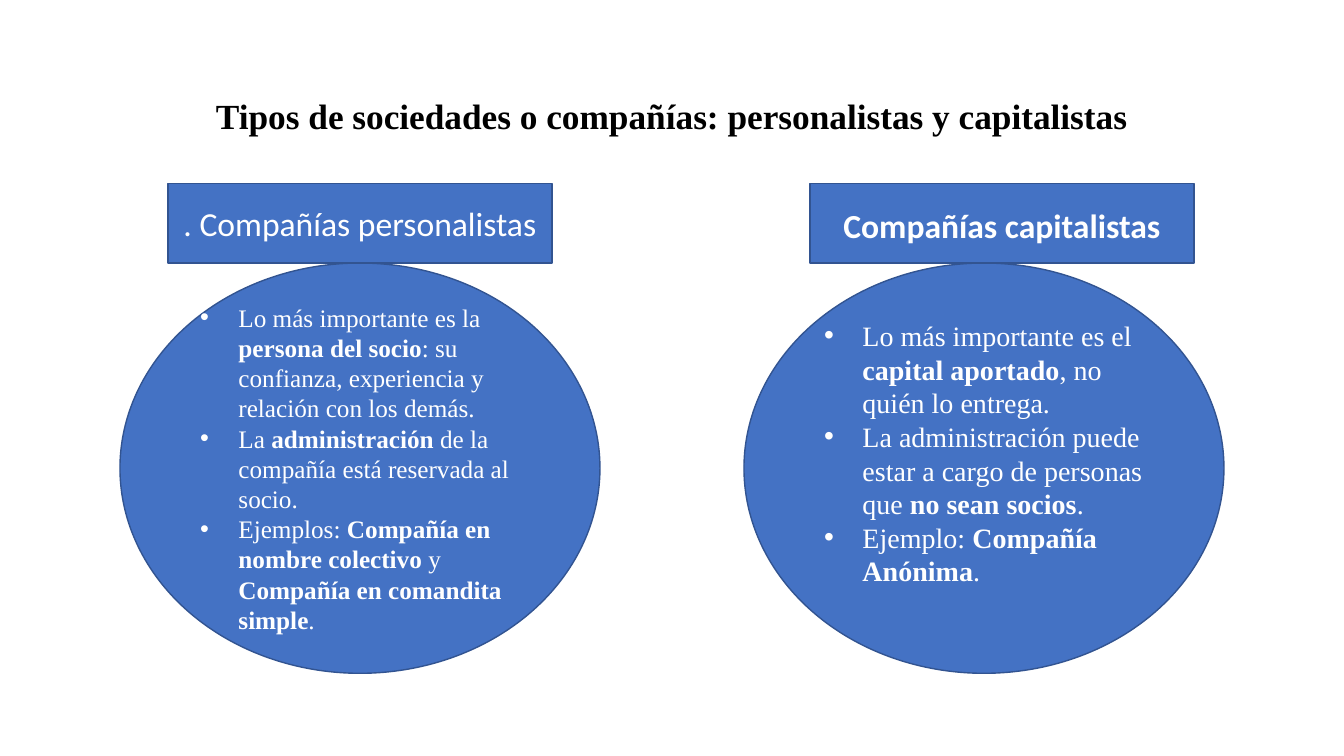
"""Build the slide that contrasts the two types of companies."""
from dataclasses import dataclass

from lxml import etree
from pptx import Presentation
from pptx.dml.color import RGBColor
from pptx.enum.shapes import MSO_SHAPE
from pptx.enum.text import MSO_ANCHOR, MSO_AUTO_SIZE, PP_ALIGN
from pptx.oxml.ns import qn
from pptx.util import Inches, Pt

ELLIPSE, RECTANGLE = MSO_SHAPE.OVAL, MSO_SHAPE.RECTANGLE
MIDDLE, BOTTOM = MSO_ANCHOR.MIDDLE, MSO_ANCHOR.BOTTOM
LEFT, CENTER = PP_ALIGN.LEFT, PP_ALIGN.CENTER
NO_AUTOFIT = MSO_AUTO_SIZE.NONE

COLORS = {"fill": "4472C4", "outline": "325491", "light": "FFFFFF", "dark": "000000"}
SERIF, SANS = "Times New Roman", "Calibri"
WIDTH, HEIGHT = Inches(13.33), Inches(7.5)
COLUMNS, ROWS = 56, 75
HEADING_TOP, HEADING_ROWS, HEADING_COLUMNS = 18.2, 7.9, 16
CIRCLE_TOP, CIRCLE_ROWS, CIRCLE_COLUMNS = 26.1, 40.7, 20
BULLET_INDENT = Inches(0.38)


@dataclass(frozen=True)
class Span:
    text: str
    bold: bool = False


@dataclass(frozen=True)
class Company:
    heading: Span
    heading_column: float
    circle_column: float
    size: float
    bottom_inset: float
    traits: tuple[tuple[Span, ...], ...]
    heading_spacing: tuple[float, float, float] = (1.0, 0, 0)


COMPANIES = (
    Company(
        Span(". Compañías personalistas"), 7, 5, 18, 0.05,
        (
            (Span("Lo más importante es la "), Span("persona del socio", True),
             Span(": su confianza, experiencia y relación con los demás.")),
            (Span("La "), Span("administración", True),
             Span(" de la compañía está reservada al socio.")),
            (Span("Ejemplos: "), Span("Compañía en nombre colectivo", True), Span(" y "),
             Span("Compañía en comandita simple", True), Span(".")),
        ),
    ),
    Company(
        Span("Compañías capitalistas", True), 33.75, 31, 20, 0.35,
        (
            (Span("Lo más importante es el "), Span("capital aportado", True),
             Span(", no quién lo entrega.")),
            (Span("La administración puede estar a cargo de personas que "),
             Span("no sean socios", True), Span(".")),
            (Span("Ejemplo: "), Span("Compañía Anónima", True), Span(".")),
        ),
        (1.07, 12, 3),
    ),
)


def grid_box(column: float, row: float, columns: float, rows: float) -> tuple[int, ...]:
    """Turn grid cells into left, top, width and height."""
    return (int(WIDTH * column / COLUMNS), int(HEIGHT * row / ROWS),
            int(WIDTH * columns / COLUMNS), int(HEIGHT * rows / ROWS))


def write_span(paragraph, span: Span, size: float, typeface: str, color: str) -> None:
    """Append one formatted run."""
    run = paragraph.add_run()
    run.text = span.text
    run.font.size, run.font.name, run.font.bold = Pt(size), typeface, span.bold
    run.font.color.rgb = RGBColor.from_string(COLORS[color])


def add_panel(slide, outline, box: tuple[int, ...]):
    """Draw a filled shape and return its text frame."""
    panel = slide.shapes.add_shape(outline, *box)
    panel.shadow.inherit = False
    panel.fill.solid()
    panel.fill.fore_color.rgb = RGBColor.from_string(COLORS["fill"])
    panel.line.color.rgb = RGBColor.from_string(COLORS["outline"])
    panel.line.width = Pt(1)
    panel.text_frame.word_wrap = True
    panel.text_frame.vertical_anchor = MIDDLE
    return panel.text_frame


def add_bullet(paragraph) -> None:
    """Give a paragraph a hanging bullet."""
    properties = paragraph._p.get_or_add_pPr()
    properties.set("marL", str(BULLET_INDENT))
    properties.set("indent", str(-BULLET_INDENT))
    etree.SubElement(properties, qn("a:buFont")).set("typeface", "Arial")
    etree.SubElement(properties, qn("a:buChar")).set("char", "•")


def add_traits(slide, company: Company) -> None:
    """Draw the ellipse that lists the traits of a company."""
    box = grid_box(company.circle_column, CIRCLE_TOP, CIRCLE_COLUMNS, CIRCLE_ROWS)
    traits = add_panel(slide, ELLIPSE, box)
    traits.margin_bottom = Inches(company.bottom_inset)
    for index, trait in enumerate(company.traits):
        paragraph = traits.add_paragraph() if index else traits.paragraphs[0]
        paragraph.alignment = LEFT
        add_bullet(paragraph)
        for span in trait:
            write_span(paragraph, span, company.size, SERIF, "light")


def add_heading(slide, company: Company) -> None:
    """Draw the rectangle that names a company."""
    box = grid_box(company.heading_column, HEADING_TOP, HEADING_COLUMNS, HEADING_ROWS)
    paragraph = add_panel(slide, RECTANGLE, box).paragraphs[0]
    line_spacing, before, after = company.heading_spacing
    paragraph.alignment = CENTER
    paragraph.line_spacing = line_spacing
    paragraph.space_before, paragraph.space_after = Pt(before), Pt(after)
    write_span(paragraph, company.heading, 24, SANS, "light")


def add_title(slide) -> None:
    """Place and fill the title placeholder."""
    title = slide.shapes.title
    title.left, title.top, title.width, title.height = grid_box(7, 7, 42, 11.2)
    frame = title.text_frame
    frame.word_wrap, frame.auto_size = True, NO_AUTOFIT
    frame.vertical_anchor = BOTTOM
    frame.margin_bottom = Inches(0.46)
    paragraph = frame.paragraphs[0]
    paragraph.alignment, paragraph.line_spacing = CENTER, 0.9
    topic = Span("Tipos de sociedades o compañías: personalistas y capitalistas", True)
    write_span(paragraph, topic, 25.2, SERIF, "dark")


def main() -> None:
    """Assemble and save the presentation."""
    presentation = Presentation()
    presentation.slide_width, presentation.slide_height = WIDTH, HEIGHT
    slide = presentation.slides.add_slide(presentation.slide_layouts[5])
    add_title(slide)
    for company in COMPANIES:
        add_traits(slide, company)
    for company in COMPANIES:
        add_heading(slide, company)
    presentation.save("out.pptx")


if __name__ == "__main__":
    main()
